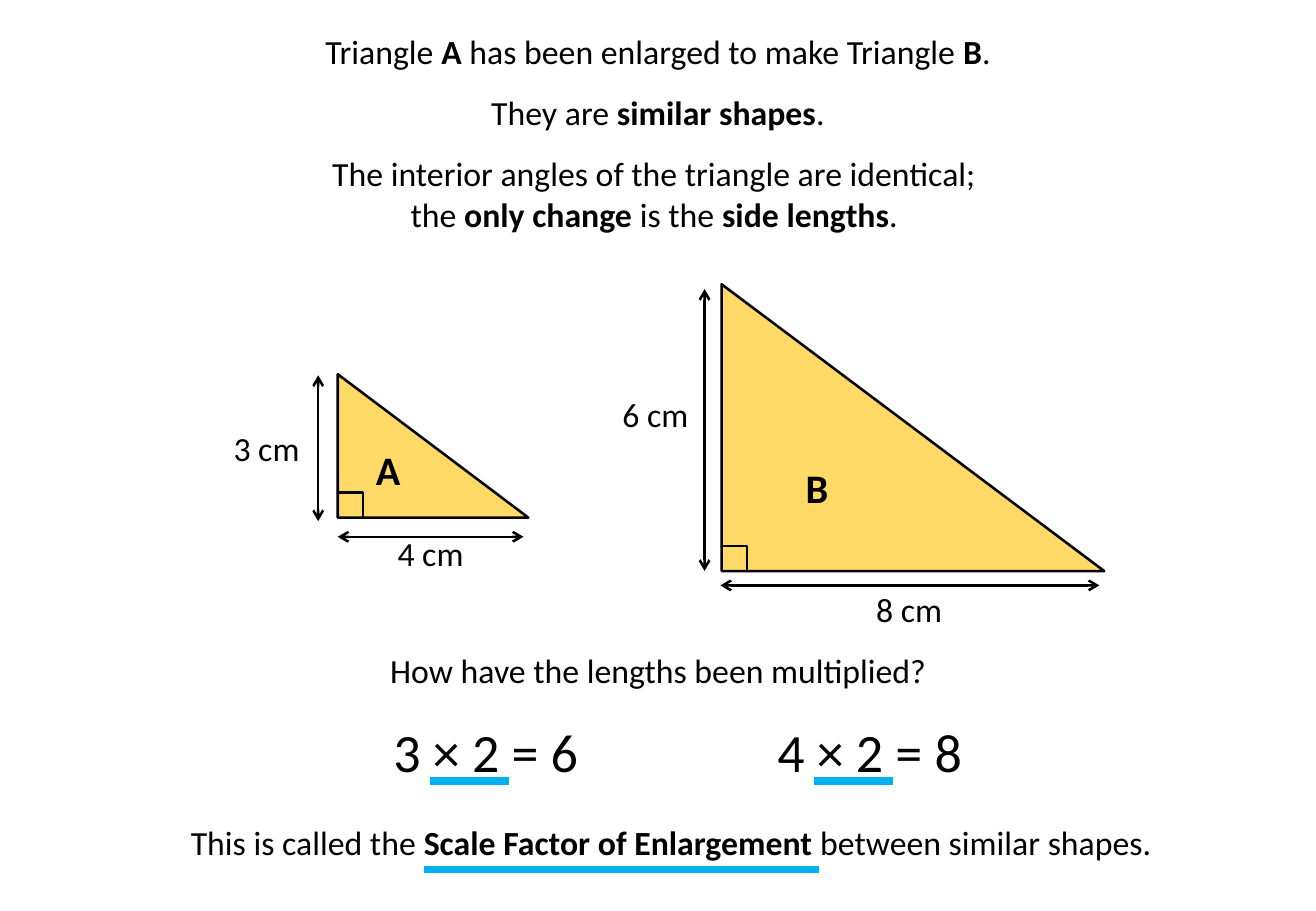
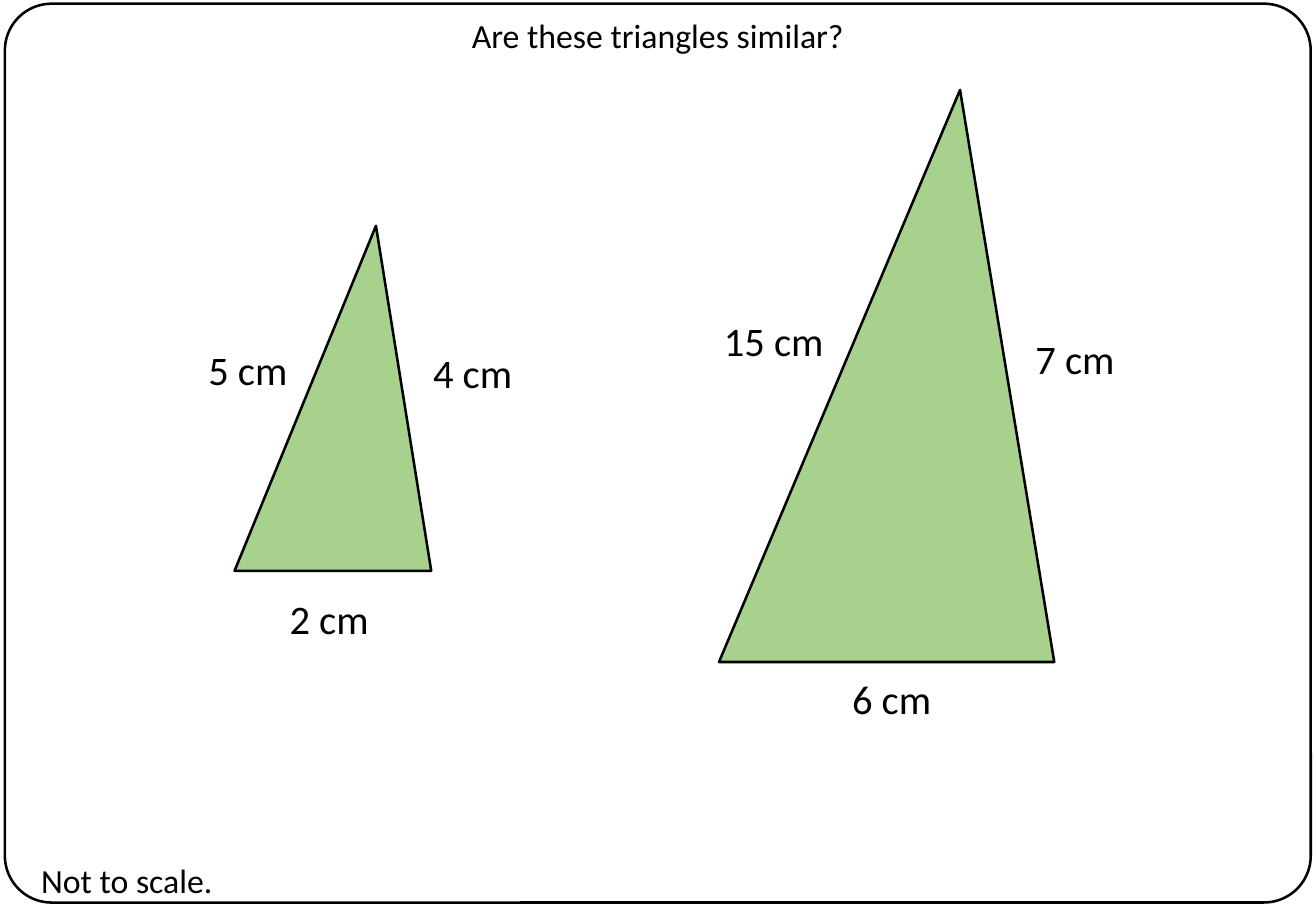
"""Build two slides on similar triangles and the scale factor of enlargement."""
from dataclasses import dataclass

from lxml.etree import SubElement
from pptx import Presentation
from pptx.dml.color import RGBColor
from pptx.enum.shapes import MSO_CONNECTOR, MSO_SHAPE
from pptx.enum.text import MSO_ANCHOR, MSO_AUTO_SIZE, PP_ALIGN
from pptx.oxml.ns import qn
from pptx.shapes.autoshape import Shape
from pptx.slide import Slide
from pptx.util import Pt


@dataclass(frozen=True)
class Theme:
    font: str = "Calibri"
    ink: RGBColor = RGBColor(0x00, 0x00, 0x00)
    yellow: RGBColor = RGBColor(0xFF, 0xD9, 0x66)
    green: RGBColor = RGBColor(0xA9, 0xD1, 0x8E)
    accent: RGBColor = RGBColor(0x00, 0xB0, 0xF0)
    body: float = 20
    large: float = 24
    equation: float = 32
    line_height: float = 1.22
    outline: float = 1.5
    underline: float = 4.5
    paragraph_gap: float = 12.2


@dataclass(frozen=True)
class Box:
    left: float
    top: float
    width: float
    height: float

    @property
    def bottom(self) -> float:
        return self.top + self.height


@dataclass(frozen=True)
class Label:
    text: str
    centre: float
    top: float
    width: float
    size: float


@dataclass(frozen=True)
class Line:
    x1: float
    y1: float
    x2: float
    y2: float


THEME = Theme()
WIDTH, HEIGHT = 780, 540
RIGHT_ANGLE = 15
APEX = 0.719

RIGHT_TRIANGLES = (Box(200.2, 221.8, 113, 85), Box(427.7, 168.5, 226.8, 170))
DIMENSIONS = (
    Line(310.3, 318.2, 200.2, 318.2),
    Line(651.6, 347, 427, 347),
    Line(188.6, 222.5, 188.6, 308.9),
    Line(417.6, 171.4, 417.6, 338.4),
)
ENLARGEMENT_TITLE = Label(
    "Triangle *A* has been enlarged to make Triangle *B*.", 390, 14.4, 413, THEME.body)
ENLARGEMENT_LABELS = (
    Label("4 cm", 255.2, 312.5, 54, THEME.body),
    Label("8 cm", 538.9, 345.6, 54, THEME.body),
    Label("6 cm", 388.5, 229.7, 54, THEME.body),
    Label("3 cm", 158, 249.8, 54, THEME.body),
    Label("*A*", 230, 260, 29.5, THEME.large),
    Label("*B*", 484.2, 270.7, 28, THEME.large),
    Label("How have the lengths been multiplied?", 390.2, 381.6, 335.5, THEME.body),
    Label("This is called the *Scale Factor of Enlargement *between similar shapes.",
          397.8, 483.8, 594, THEME.body),
)
EQUATIONS = (
    Label("3 × 2 = 6", 288, 422.6, 125.3, THEME.equation),
    Label("4 × 2 = 8", 515.5, 422.6, 125.3, THEME.equation),
)
FACTS = Label(
    "They are *similar shapes*.\n"
    "The interior angles of the triangle are identical; \n"
    "the *only change *is the *side lengths*. ", 390, 51, 413, THEME.body)

FRAME = Box(2.9, 2.2, 774, 532.8)
SCALENE_TRIANGLES = (Box(139, 133.9, 116.6, 204.5), Box(426.2, 53.3, 198.7, 339.1))
QUESTION_TITLE = Label("Are these triangles similar?", 390, 5, 237.6, THEME.body)
QUESTION_LABELS = (
    Label("Not to scale.", 75.2, 506.2, 117.4, THEME.body),
    Label("5 cm", 146.9, 200.9, 62, THEME.large),
    Label("4 cm", 280.1, 203, 62, THEME.large),
    Label("2 cm", 195.1, 348.5, 62, THEME.large),
    Label("15 cm", 458.6, 183.6, 74.2, THEME.large),
    Label("7 cm", 637.2, 194.4, 62, THEME.large),
    Label("6 cm", 528.5, 396, 62, THEME.large),
)


def write_text(sp: Shape, label: Label) -> None:
    """Place a text shape and fill it, with bold parts between asterisks."""
    lines = label.text.split("\n")
    sp.left, sp.top = Pt(label.centre - label.width / 2), Pt(label.top)
    sp.width = Pt(label.width)
    sp.height = Pt(label.size * THEME.line_height * len(lines) + 7.2)
    tf = sp.text_frame
    tf.word_wrap = False
    tf.auto_size = MSO_AUTO_SIZE.NONE
    tf.vertical_anchor = MSO_ANCHOR.TOP
    for i, line in enumerate(lines):
        p = tf.add_paragraph() if i else tf.paragraphs[0]
        p.alignment = PP_ALIGN.CENTER
        p.space_before = Pt(THEME.paragraph_gap if i == 1 else 0)
        p.font.name = THEME.font
        p.font.size = Pt(label.size)
        p.font.color.rgb = THEME.ink
        for j, part in enumerate(line.split("*")):
            if part:
                r = p.add_run()
                r.text = part
                if j % 2:
                    r.font.bold = True


def add_label(s: Slide, label: Label) -> None:
    """Add a centred text box."""
    write_text(s.shapes.add_textbox(0, 0, 0, 0), label)


def add_outlined(s: Slide, kind: MSO_SHAPE, box: Box, adjustments: tuple[float, ...],
                 fill: RGBColor | None = None) -> Shape:
    """Add a preset shape with the common black outline."""
    sp = s.shapes.add_shape(kind, Pt(box.left), Pt(box.top), Pt(box.width), Pt(box.height))
    sp.shadow.inherit = False
    for i, value in enumerate(adjustments):
        sp.adjustments[i] = value
    if fill is None:
        sp.fill.background()
    else:
        sp.fill.solid()
        sp.fill.fore_color.rgb = fill
    sp.line.color.rgb = THEME.ink
    sp.line.width = Pt(THEME.outline)
    return sp


def add_line(s: Slide, line: Line, color: RGBColor, width: float, arrows: bool = False) -> None:
    """Add a straight line, with arrowheads at both ends if asked."""
    cn = s.shapes.add_connector(
        MSO_CONNECTOR.STRAIGHT, Pt(line.x1), Pt(line.y1), Pt(line.x2), Pt(line.y2))
    cn.line.color.rgb = color
    cn.line.width = Pt(width)
    if arrows:
        ln = cn.line._get_or_add_ln()
        for tag in ("a:headEnd", "a:tailEnd"):
            SubElement(ln, qn(tag), type="arrow")
    SubElement(cn._element.spPr, qn("a:effectLst"))


def add_slide(prs: Presentation, title: Label) -> Slide:
    """Add a title-only slide with its title set."""
    s = prs.slides.add_slide(prs.slide_layouts[5])
    write_text(s.shapes.title, title)
    return s


def build_enlargement(prs: Presentation) -> None:
    """Build the slide that explains the scale factor."""
    s = add_slide(prs, ENLARGEMENT_TITLE)
    add_label(s, FACTS)
    for box in RIGHT_TRIANGLES:
        add_outlined(s, MSO_SHAPE.ISOSCELES_TRIANGLE, box, (0,), THEME.yellow)
        corner = Box(box.left, box.bottom - RIGHT_ANGLE, RIGHT_ANGLE, RIGHT_ANGLE)
        add_outlined(s, MSO_SHAPE.CORNER, corner, (0, 0), THEME.yellow).rotation = 180
    for line in DIMENSIONS:
        add_line(s, line, THEME.ink, THEME.outline, arrows=True)
    for label in ENLARGEMENT_LABELS + EQUATIONS:
        add_label(s, label)
    underlines = [Line(eq.centre - 33.1, 463, eq.centre + 13.7, 463) for eq in EQUATIONS]
    for line in (*underlines, Line(251.3, 515.5, 485.3, 515.5)):
        add_line(s, line, THEME.accent, THEME.underline)


def build_question(prs: Presentation) -> None:
    """Build the slide that asks whether two triangles are similar."""
    s = add_slide(prs, QUESTION_TITLE)
    add_outlined(s, MSO_SHAPE.ROUNDED_RECTANGLE, FRAME, (0.052,))
    for box in SCALENE_TRIANGLES:
        add_outlined(s, MSO_SHAPE.ISOSCELES_TRIANGLE, box, (APEX,), THEME.green)
    for label in QUESTION_LABELS:
        add_label(s, label)


def main() -> None:
    """Build and save the presentation."""
    prs = Presentation()
    prs.slide_width, prs.slide_height = Pt(WIDTH), Pt(HEIGHT)
    build_enlargement(prs)
    build_question(prs)
    prs.save("out.pptx")


if __name__ == "__main__":
    main()
